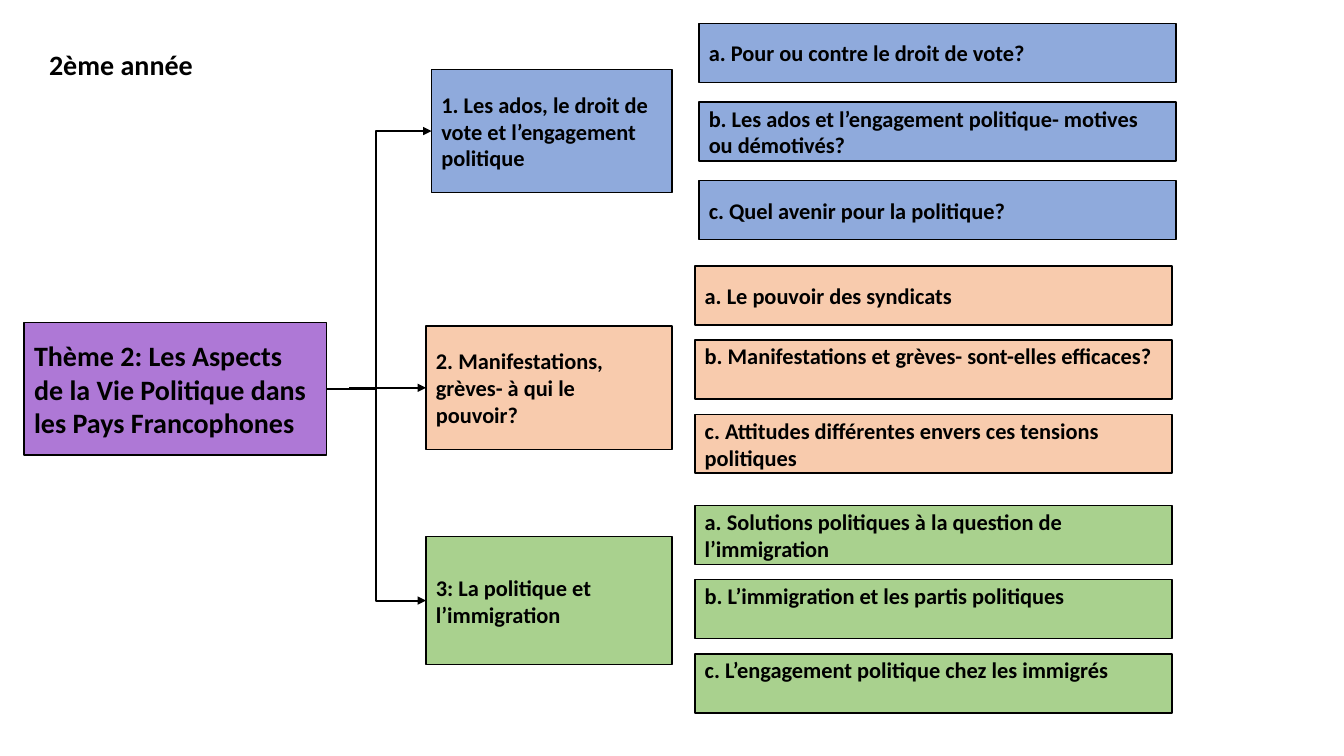
import pptx
import pptx.dml.color
import pptx.enum.shapes
import pptx.enum.text
import pptx.oxml
import pptx.oxml.ns
import pptx.util

MIDDLE = pptx.enum.text.MSO_ANCHOR.MIDDLE
TOP = pptx.enum.text.MSO_ANCHOR.TOP
LEFT_SIDE, RIGHT_SIDE = 1, 3


def color(value):
    return pptx.dml.color.RGBColor.from_string(value)


class Deck:
    """Style and current slide; lengths are percentages of the slide's size."""

    font = "Calibri"
    ink = "000000"

    def __init__(self, width, height):
        self.prs = pptx.Presentation()
        self.prs.slide_width = pptx.util.Inches(width)
        self.prs.slide_height = pptx.util.Inches(height)
        self.slide = self.prs.slides.add_slide(self.prs.slide_layouts[5])

    def x(self, share):
        return round(self.prs.slide_width * share / 100)

    def y(self, share):
        return round(self.prs.slide_height * share / 100)

    def set_text(self, sp, text, size, anchor, inset=0.05):
        tf = sp.text_frame
        tf.text = text
        tf.word_wrap = True
        tf.auto_size = pptx.enum.text.MSO_AUTO_SIZE.NONE
        tf.vertical_anchor = anchor
        tf.margin_left = tf.margin_right = pptx.util.Inches(0.1)
        tf.margin_top = tf.margin_bottom = pptx.util.Inches(inset)
        p = tf.paragraphs[0]
        p.alignment = pptx.enum.text.PP_ALIGN.LEFT
        font = p.runs[0].font
        font.name, font.size, font.bold = self.font, pptx.util.Pt(size), True
        font.color.rgb = color(self.ink)

    def title(self, text, left, top, width, height):
        sp = self.slide.shapes.title
        sp.left, sp.top = self.x(left), self.y(top)
        sp.width, sp.height = self.x(width), self.y(height)
        self.set_text(sp, text, 20, TOP)

    def box(self, text, left, top, width, height, fill, size=16,
            anchor=MIDDLE, inset=0.05):
        sp = self.slide.shapes.add_shape(
            pptx.enum.shapes.MSO_SHAPE.RECTANGLE,
            self.x(left), self.y(top), self.x(width), self.y(height))
        sp.shadow.inherit = False
        sp.fill.solid()
        sp.fill.fore_color.rgb = color(fill)
        sp.line.color.rgb = color(self.ink)
        sp.line.width = pptx.util.Pt(1)
        self.set_text(sp, text, size, anchor, inset)
        return sp

    def arrow(self, kind, begin_x, begin_y, target):
        """Arrow from a point to the left side of the target box."""
        cxn = self.slide.shapes.add_connector(
            kind, begin_x, begin_y,
            target.left, target.top + target.height // 2)
        cxn.end_connect(target, LEFT_SIDE)
        cxn.line.color.rgb = color(self.ink)
        cxn.line.width = pptx.util.Pt(1.5)
        ln = cxn._element.spPr.find(pptx.oxml.ns.qn("a:ln"))
        ns = pptx.oxml.ns.nsdecls("a")
        ln.append(pptx.oxml.parse_xml(f'<a:tailEnd {ns} type="triangle"/>'))
        ln.addnext(pptx.oxml.parse_xml(f"<a:effectLst {ns}/>"))
        return cxn

    def straight(self, begin_x, target):
        self.arrow(pptx.enum.shapes.MSO_CONNECTOR.STRAIGHT, self.x(begin_x),
                   target.top + target.height // 2, target)

    def elbow(self, source, target, bend_x):
        begin_x = source.left + source.width
        cxn = self.arrow(pptx.enum.shapes.MSO_CONNECTOR.ELBOW, begin_x,
                         source.top + source.height // 2, target)
        cxn.begin_connect(source, RIGHT_SIDE)
        share = (self.x(bend_x) - begin_x) / (target.left - begin_x)
        geom = cxn._element.spPr.find(pptx.oxml.ns.qn("a:prstGeom"))
        for av in geom.findall(pptx.oxml.ns.qn("a:avLst")):
            geom.remove(av)
        ns = pptx.oxml.ns.nsdecls("a")
        geom.append(pptx.oxml.parse_xml(
            f'<a:avLst {ns}><a:gd name="adj1" '
            f'fmla="val {round(share * 100000)}"/></a:avLst>'))


TOPIC_RIGHT = 50
LEAF_WIDTH, LEAF_HEIGHT = 35.5, 7.8
BEND_X = 28

# topic, fill, (left, top, height), leaves' (left, top, step), leaves
TOPICS = [
    ("1. Les ados, le droit de vote et l’engagement politique", "8FAADC",
     (32.1, 9.2, 16.3), (52, 3.1, 10.4), [
         ("a. Pour ou contre le droit de vote?", MIDDLE),
         ("b. Les ados et l’engagement politique- motives ou démotivés?", MIDDLE),
         ("c. Quel avenir pour la politique?", MIDDLE)]),
    ("2. Manifestations, grèves- à qui le pouvoir?", "F8CBAD",
     (31.7, 43.1, 16.4), (51.7, 35.2, 9.8), [
         ("a. Le pouvoir des syndicats", MIDDLE),
         ("b. Manifestations et grèves- sont-elles efficaces?", TOP),
         ("c. Attitudes différentes envers ces tensions politiques", MIDDLE)]),
    ("3: La politique et l’immigration", "A9D18E",
     (31.7, 71, 16.9), (51.7, 66.9, 9.8), [
         ("a. Solutions politiques à la question de l’immigration", MIDDLE),
         ("b. L’immigration et les partis politiques", TOP),
         ("c. L’engagement politique chez les immigrés", TOP)]),
]


def main():
    deck = Deck(13.33, 7.5)
    deck.title("2ème année", 2.9, 5.6, 12.3, 5.8)

    # Theme
    theme = deck.box(
        "Thème 2: Les Aspects de la Vie Politique dans les Pays Francophones",
        1.8, 42.7, 22.5, 17.5, "AE78D6", size=20)

    # Topics with their leaves
    topics = []
    for text, fill, (left, top, height), (leaf_x, leaf_y, step), leaves in TOPICS:
        topics.append(deck.box(text, left, top, TOPIC_RIGHT - left, height, fill))
        for i, (leaf, anchor) in enumerate(leaves):
            deck.box(leaf, leaf_x, leaf_y + i * step, LEAF_WIDTH, LEAF_HEIGHT,
                     fill, anchor=anchor, inset=0.02)

    # Arrows from the theme to the topics
    first, second, third = topics
    deck.elbow(theme, first, BEND_X)
    deck.elbow(theme, third, BEND_X)
    deck.straight(26, second)

    deck.prs.save("out.pptx")


if __name__ == "__main__":
    main()
